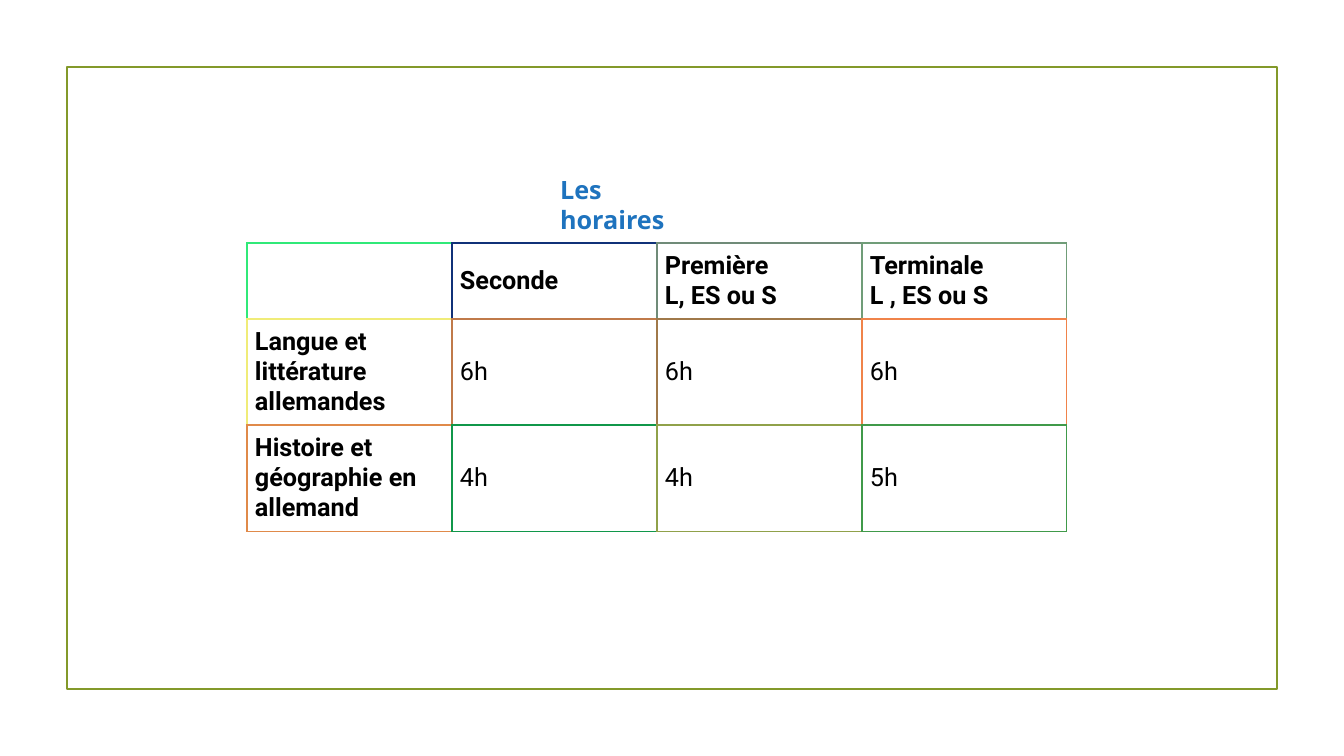
"""Build the slide that shows the weekly teaching hours."""
from dataclasses import dataclass

from lxml.etree import SubElement
from pptx import Presentation
from pptx.dml.color import RGBColor
from pptx.enum.shapes import MSO_SHAPE
from pptx.enum.text import MSO_ANCHOR, MSO_AUTO_SIZE, PP_ALIGN
from pptx.oxml.ns import qn
from pptx.util import Emu, Pt

SCALE = 914400 / 100.8
COL = 205
ROWS = (76, 106, 106)


@dataclass
class Entry:
    text: str
    tint: str
    bold: bool = False


GRID = (
    (
        Entry("", "30E978"),
        Entry("Seconde", "103178", True),
        Entry("Première\vL, ES ou S", "708B78", True),
        Entry("Terminale\vL , ES ou S", "709D78", True),
    ),
    (
        Entry("Langue et littérature allemandes", "F0EC78", True),
        Entry("6h", "C07A4A"),
        Entry("6h", "A0794A"),
        Entry("6h", "F0834A"),
    ),
    (
        Entry("Histoire et géographie en allemand", "E08A4A", True),
        Entry("4h", "10974A"),
        Entry("4h", "90A14A"),
        Entry("5h", "409A4A"),
    ),
)


def px(count: int) -> Emu:
    return Emu(round(count * SCALE))


def paint(code: str) -> RGBColor:
    return RGBColor.from_string(code)


def style(para, face: str, tint: str, bold: bool) -> None:
    for run in para.runs:
        font = run.font
        font.name = face
        font.size = Pt(18)
        font.bold = bold
        font.color.rgb = paint(tint)


def edge(cell, side: str, tint: str, width: float) -> None:
    line = SubElement(cell._tc.get_or_add_tcPr(), qn(f"a:ln{side}"), w=str(Pt(width)))
    fill = SubElement(line, qn("a:solidFill"))
    SubElement(fill, qn("a:srgbClr"), val=tint)


def border(cell, row: int, col: int) -> None:
    own = GRID[row][col].tint
    last_col = col == len(GRID[row]) - 1
    last_row = row == len(GRID) - 1
    right = own if last_col else GRID[row][col + 1].tint
    below = own if last_row else GRID[row + 1][col].tint
    edge(cell, "L", own, 1)
    edge(cell, "R", right, 0.75 if last_col else 1)
    edge(cell, "T", own, 1)
    edge(cell, "B", below, 0.75 if last_row else 1)


def draw_frame(slide) -> None:
    frame = slide.shapes.add_shape(
        MSO_SHAPE.RECTANGLE, px(67), px(67), px(1210), px(622)
    )
    frame.shadow.inherit = False
    frame.fill.background()
    frame.line.color.rgb = paint("83992A")
    frame.line.width = Pt(1.25)


def draw_title(slide) -> None:
    title = slide.shapes.title
    title.left, title.top = px(550), px(169)
    title.width, title.height = px(168), px(40)
    text = title.text_frame
    text.text = "Les horaires"
    text.word_wrap = True
    text.auto_size = MSO_AUTO_SIZE.NONE
    text.vertical_anchor = MSO_ANCHOR.TOP
    para = text.paragraphs[0]
    para.alignment = PP_ALIGN.LEFT
    para.line_spacing = 1.0
    style(para, "Open Sans", "1E73BE", True)


def draw_table(slide) -> None:
    count = len(GRID[0])
    table = slide.shapes.add_table(
        len(GRID), count, px(247), px(243), px(COL * count), px(sum(ROWS))
    ).table
    table.first_row = table.horz_banding = False
    for col in table.columns:
        col.width = px(COL)
    for row, high in zip(table.rows, ROWS):
        row.height = px(high)
    for r, line in enumerate(GRID):
        for c, entry in enumerate(line):
            cell = table.cell(r, c)
            cell.text_frame.text = entry.text
            style(cell.text_frame.paragraphs[0], "Roboto", "000000", entry.bold)
            cell.vertical_anchor = MSO_ANCHOR.MIDDLE
            cell.margin_left = cell.margin_right = px(8)
            cell.margin_top = cell.margin_bottom = px(8)
            border(cell, r, c)
            cell.fill.background()


def main() -> None:
    deck = Presentation()
    deck.slide_width, deck.slide_height = px(1344), px(756)
    slide = deck.slides.add_slide(deck.slide_layouts[5])
    draw_frame(slide)
    draw_table(slide)
    draw_title(slide)
    deck.save("out.pptx")


if __name__ == "__main__":
    main()
